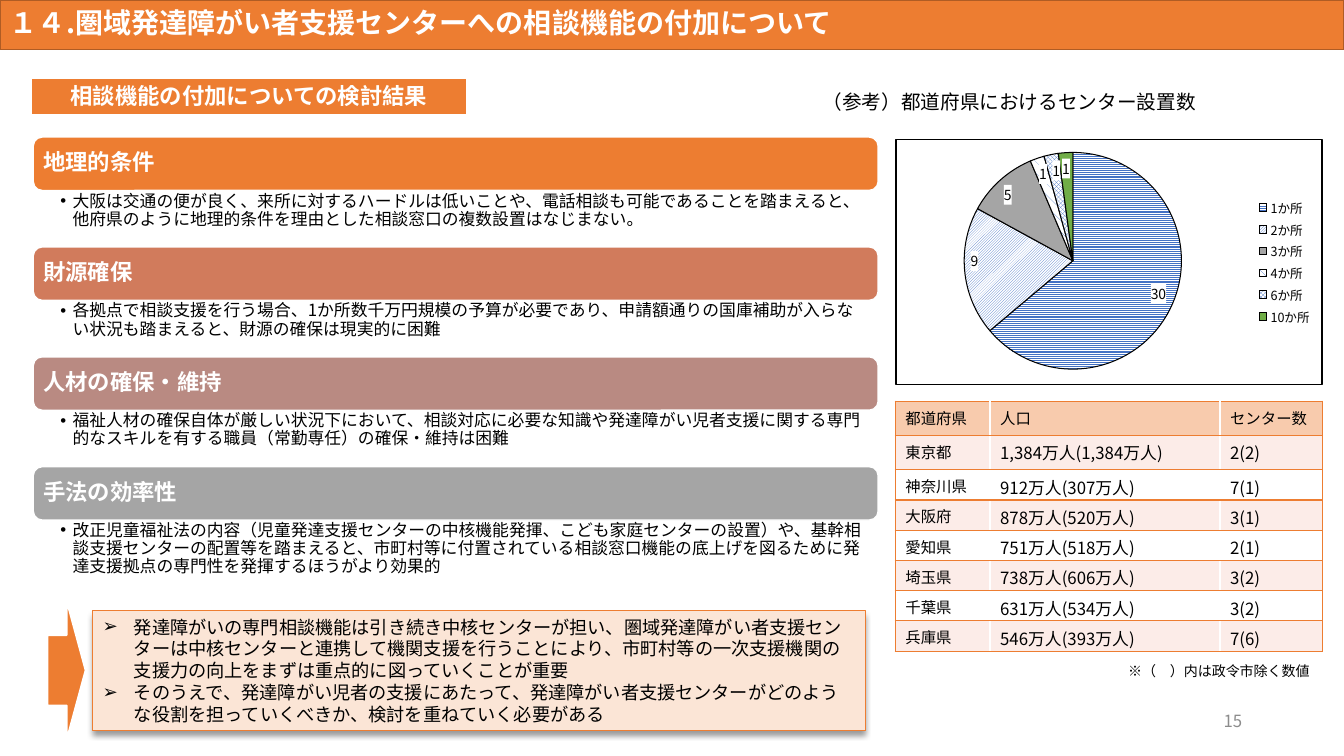
from lxml import etree
from pptx import Presentation
from pptx import util as u
from pptx.chart.data import CategoryChartData
from pptx.dml.color import RGBColor
from pptx.enum import chart as charts, dml, shapes, text
from pptx.oxml import parse_xml
from pptx.oxml.ns import qn

COLORS = {
    "orange": "ED7D31", "edge": "AF5C24", "white": "FFFFFF", "black": "000000",
    "cream": "FBE5D6", "terracotta": "D17B5C", "rose": "B98A82", "grey": "A5A5A5",
    "number": "8C8C8C", "header": "F8CBAD", "band": "FCECE8", "blue": "4472C4",
    "green": "70AD47",
}
NAMESPACES = ('xmlns:a="http://schemas.openxmlformats.org/drawingml/2006/main" '
              'xmlns:c="http://schemas.openxmlformats.org/drawingml/2006/chart"')
SECTIONS = [
    ("地理的条件", "orange", 0.56,
     "大阪は交通の便が良く、来所に対するハードルは低いことや、電話相談も可能であることを踏まえると、他府県のように地理的条件を理由とした相談窓口の複数設置はなじまない。"),
    ("財源確保", "terracotta", 0.56,
     "各拠点で相談支援を行う場合、1か所数千万円規模の予算が必要であり、申請額通りの国庫補助が入らない状況も踏まえると、財源の確保は現実的に困難"),
    ("人材の確保・維持", "rose", 0.56,
     "福祉人材の確保自体が厳しい状況下において、相談対応に必要な知識や発達障がい児者支援に関する専門的なスキルを有する職員（常勤専任）の確保・維持は困難"),
    ("手法の効率性", "grey", 0.81,
     "改正児童福祉法の内容（児童発達支援センターの中核機能発揮、こども家庭センターの設置）や、基幹相談支援センターの配置等を踏まえると、市町村等に付置されている相談窓口機能の底上げを図るために発達支援拠点の専門性を発揮するほうがより効果的"),
]
CONCLUSIONS = [
    "発達障がいの専門相談機能は引き続き中核センターが担い、圏域発達障がい者支援センターは中核センターと連携して機関支援を行うことにより、市町村等の一次支援機関の支援力の向上をまずは重点的に図っていくことが重要",
    "そのうえで、発達障がい児者の支援にあたって、発達障がい者支援センターがどのような役割を担っていくべきか、検討を重ねていく必要がある",
]
PREFECTURES = [
    ("都道府県", "人口", "センター数"),
    ("東京都", "1,384万人(1,384万人)", "2(2)"),
    ("神奈川県", "912万人(307万人)", "7(1)"),
    ("大阪府", "878万人(520万人)", "3(1)"),
    ("愛知県", "751万人(518万人)", "2(1)"),
    ("埼玉県", "738万人(606万人)", "3(2)"),
    ("千葉県", "631万人(534万人)", "3(2)"),
    ("兵庫県", "546万人(393万人)", "7(6)"),
]
CENTERS = {"1か所": 30, "2か所": 9, "3か所": 5, "4か所": 1, "6か所": 1, "10か所": 1}
SLICES = [dml.MSO_PATTERN.LIGHT_HORIZONTAL, dml.MSO_PATTERN.DARK_UPWARD_DIAGONAL, "grey",
          dml.MSO_PATTERN.SHINGLE, dml.MSO_PATTERN.TRELLIS, "green"]


def rgb(name):
    return RGBColor.from_string(COLORS[name])


def fragment(xml):
    tag_end = min(i for i in (xml.find(" "), xml.find(">")) if i > 0)
    return parse_xml(f"{xml[:tag_end]} {NAMESPACES}{xml[tag_end:]}")


class SlideBuilder:
    font = "Noto Sans CJK JP"

    def __init__(self, slide):
        self.slide = slide

    def style_font(self, font, size, color="black", bold=False):
        font.name, font.size, font.bold = self.font, u.Pt(size), bold
        font.color.rgb = rgb(color)

    def fill_frame(self, frame, lines, size, color="black", bold=False, align="LEFT",
                   anchor="TOP", bullet=None, indent=0, spacing=None, insets=None, wrap=True):
        frame.word_wrap = wrap
        frame.vertical_anchor = text.MSO_ANCHOR[anchor]
        if insets:
            (frame.margin_left, frame.margin_top,
             frame.margin_right, frame.margin_bottom) = map(u.Inches, insets)
        for index, line in enumerate(lines):
            paragraph = frame.add_paragraph() if index else frame.paragraphs[0]
            paragraph.alignment = text.PP_ALIGN[align]
            if bullet:
                properties = paragraph._p.get_or_add_pPr()
                properties.set("marL", str(u.Inches(indent)))
                properties.set("indent", str(-u.Inches(indent)))
                etree.SubElement(properties, qn("a:buFont")).set("typeface", "Arial")
                etree.SubElement(properties, qn("a:buChar")).set("char", bullet)
            if spacing:
                paragraph.line_spacing = spacing
            run = paragraph.add_run()
            run.text = line
            self.style_font(run.font, size, color, bold)
            east_asian = etree.Element(qn("a:ea"), typeface=self.font)
            run._r.rPr.find(qn("a:latin")).addnext(east_asian)

    def text(self, box, lines, size, **style):
        shape = self.slide.shapes.add_textbox(*map(u.Inches, box))
        self.fill_frame(shape.text_frame, lines, size, **style)

    def shape(self, kind, box, fill, line, width):
        shape = self.slide.shapes.add_shape(shapes.MSO_SHAPE[kind], *map(u.Inches, box))
        shape.shadow.inherit = False
        shape.fill.solid()
        shape.fill.fore_color.rgb = rgb(fill)
        shape.line.color.rgb = rgb(line)
        shape.line.width = u.Pt(width)
        return shape

    def drop_shadow(self, shape):
        effects = shape._element.spPr.find(qn("a:effectLst"))
        effects.append(fragment(
            f'<a:outerShdw blurRad="{u.Pt(4)}" dist="{u.Pt(3)}" dir="5400000" rotWithShape="0">'
            f'<a:srgbClr val="{COLORS["black"]}"><a:alpha val="40000"/></a:srgbClr></a:outerShdw>'))

    def cell_borders(self, cell, sides):
        properties = cell._tc.get_or_add_tcPr()
        for index, side in enumerate(sides):
            properties.insert(index, fragment(
                f'<a:ln{side} w="{u.Pt(1)}"><a:solidFill>'
                f'<a:srgbClr val="{COLORS["orange"]}"/></a:solidFill></a:ln{side}>'))

    def table(self, box, rows, widths, heights):
        frame = self.slide.shapes.add_table(len(rows), len(widths), *map(u.Inches, box))
        table = frame.table
        for column, width in zip(table.columns, widths):
            column.width = u.Inches(width)
        for r, values in enumerate(rows):
            table.rows[r].height = u.Inches(heights[r])
            bottom = 0.05 if r < 2 else 0.01
            for c, value in enumerate(values):
                cell = table.cell(r, c)
                cell.margin_left = cell.margin_right = u.Inches(0.1)
                cell.margin_top, cell.margin_bottom = u.Inches(0.05), u.Inches(bottom)
                cell.fill.solid()
                cell.fill.fore_color.rgb = rgb("header" if r == 0 else "band" if r % 2 else "white")
                self.fill_frame(cell.text_frame, [value], 12 if r and c else 11)
                left = "L" if c == 0 else ""
                right = "R" if c == len(widths) - 1 else ""
                self.cell_borders(cell, left + right + "TB")

    def pie(self, box, values, fills):
        data = CategoryChartData()
        data.categories = list(values)
        data.add_series("Series 1", list(values.values()))
        chart = self.slide.shapes.add_chart(
            charts.XL_CHART_TYPE.PIE, *map(u.Inches, box), data).chart
        chart.has_title = False
        self.style_font(chart.font, 10)
        chart.has_legend = True
        chart.legend.position = charts.XL_LEGEND_POSITION.RIGHT
        chart.legend.include_in_layout = False
        self.style_font(chart.legend.font, 9)
        plot = chart.plots[0]
        plot.vary_by_categories = True
        for index, fill in enumerate(fills):
            style = plot.series[0].points[index].format
            if isinstance(fill, str):
                style.fill.solid()
                style.fill.fore_color.rgb = rgb(fill)
            else:
                style.fill.patterned()
                style.fill.pattern = fill
                style.fill.fore_color.rgb = rgb("blue")
                style.fill.back_color.rgb = rgb("white")
            style.line.color.rgb = rgb("black")
            style.line.width = u.Pt(0.75)
        labels = plot.series[0].data_labels
        labels.show_value = True
        labels.position = charts.XL_LABEL_POSITION.INSIDE_END
        self.style_font(labels.font, 10)
        labels._element.find(qn("c:txPr")).addprevious(fragment(
            f'<c:spPr><a:solidFill><a:srgbClr val="{COLORS["white"]}">'
            '<a:alpha val="75000"/></a:srgbClr></a:solidFill></c:spPr>'))
        area = chart._chartSpace.find(qn("c:chart"))
        area.addnext(fragment(
            f'<c:spPr><a:solidFill><a:srgbClr val="{COLORS["white"]}"/></a:solidFill>'
            f'<a:ln w="{u.Pt(1)}"><a:solidFill><a:srgbClr val="{COLORS["black"]}"/>'
            '</a:solidFill></a:ln></c:spPr>'))
        plot_area = area.find(qn("c:plotArea"))
        for layout in plot_area.findall(qn("c:layout")):
            plot_area.remove(layout)
        plot_area.insert(0, fragment(
            '<c:layout><c:manualLayout><c:layoutTarget val="inner"/>'
            '<c:xMode val="edge"/><c:yMode val="edge"/><c:x val="0.16"/><c:y val="0.05"/>'
            '<c:w val="0.51"/><c:h val="0.89"/></c:manualLayout></c:layout>'))


def main():
    presentation = Presentation()
    presentation.slide_width, presentation.slide_height = u.Inches(13.33), u.Inches(7.5)
    builder = SlideBuilder(presentation.slides.add_slide(presentation.slide_layouts[6]))

    builder.text((9.42, 6.95, 3, 0.4), ["15"], 12, color="number", align="RIGHT", anchor="MIDDLE")
    title = builder.shape("RECTANGLE", (0, 0, 13.33, 0.49), "orange", "edge", 1)
    builder.fill_frame(title.text_frame, ["１４.圏域発達障がい者支援センターへの相談機能の付加について"], 20,
                       color="white", bold=True, anchor="MIDDLE", spacing=0.9)
    heading = builder.shape("RECTANGLE", (0.31, 0.77, 4.32, 0.37), "orange", "white", 1.5)
    builder.fill_frame(heading.text_frame, ["相談機能の付加についての検討結果"], 16,
                       color="white", bold=True, align="CENTER")
    conclusion = builder.shape("RECTANGLE", (0.92, 6.06, 7.66, 1.19), "cream", "orange", 0.5)
    builder.drop_shadow(conclusion)
    builder.fill_frame(conclusion.text_frame, CONCLUSIONS, 13, bullet="➢", indent=0.31)

    builder.table((8.88, 3.98, 4.24, 2.48), PREFECTURES, [0.94, 2.28, 1.02],
                  [0.34] * 2 + [0.3] * 6)
    builder.text((8.06, 0.84, 4.32, 0.34), ["（参考）都道府県におけるセンター設置数"], 14)
    builder.pie((8.88, 1.38, 4.24, 2.44), CENTERS, SLICES)
    builder.text((11.09, 6.52, 2.02, 0.27), ["※（　）内は政令市除く数値"], 10, wrap=False)

    top = 1.36
    for name, color, height, detail in SECTIONS:
        builder.shape("ROUNDED_RECTANGLE", (0.33, top, 8.38, 0.53), color, "white", 1)
        builder.text((0.36, top + 0.02, 8.32, 0.48), [name], 16, color="white", bold=True,
                     anchor="MIDDLE", spacing=0.9, insets=[0.07] * 4)
        builder.text((0.33, top + 0.53, 8.38, height), [detail], 12, bullet="•", indent=0.12,
                     spacing=0.9, insets=(0.27, 0.02, 0.12, 0.02))
        top += 0.53 + height
    builder.shape("RIGHT_ARROW", (0.47, 5.95, 0.38, 1.4), "orange", "white", 1.5)
    presentation.save("out.pptx")


if __name__ == "__main__":
    main()
